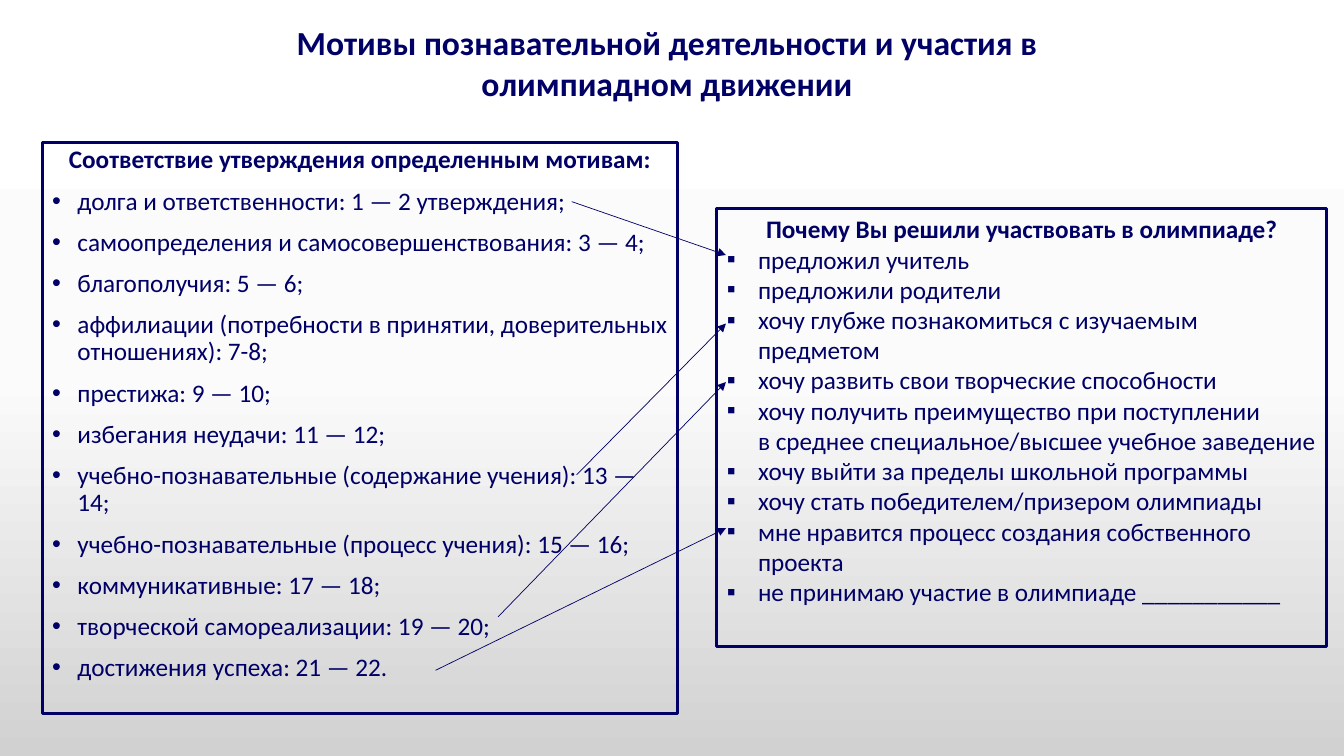
from dataclasses import dataclass
from typing import Any

from lxml.etree import SubElement
from pptx import Presentation
from pptx.dml.color import RGBColor
from pptx.enum.shapes import MSO_CONNECTOR, MSO_SHAPE
from pptx.enum.text import MSO_ANCHOR, PP_ALIGN
from pptx.oxml.ns import qn
from pptx.util import Inches, Pt

COLORS = {"navy": "000066", "top": "FFFFFF", "middle": "FBFBFB", "bottom": "D1D1D1"}
NAVY = RGBColor.from_string(COLORS["navy"])
GRADIENT = {0: "top", 50: "middle", 100: "bottom"}


@dataclass
class ListBox:
    at: tuple[float, float, float, float]
    heading: str
    items: list[str]
    bullet: str
    indent: float
    spacing: dict[str, Any]


@dataclass
class Arrow:
    start: tuple[float, float]
    end: tuple[float, float]


TITLE = "Мотивы познавательной деятельности и участия в олимпиадном движении"

BOXES = [
    ListBox(
        (0.42, 1.41, 6.3, 5.67),
        "Соответствие утверждения определенным мотивам:",
        [
            "долга и ответственности: 1 — 2 утверждения;",
            "самоопределения и самосовершенствования: 3 — 4;",
            "благополучия: 5 — 6;",
            "аффилиации (потребности в принятии, доверительных отношениях): 7-8;",
            "престижа: 9 — 10;",
            "избегания неудачи: 11 — 12;",
            "учебно-познавательные (содержание учения): 13 — 14;",
            "учебно-познавательные (процесс учения): 15 — 16;",
            "коммуникативные: 17 — 18;",
            "творческой самореализации: 19 — 20;",
            "достижения успеха: 21 — 22.",
        ],
        "•", 0.25, {"line_spacing": 0.9, "space_before": Pt(10)},
    ),
    ListBox(
        (7.11, 2.07, 6.05, 4.34),
        "Почему Вы решили участвовать в олимпиаде?",
        [
            "предложил учитель",
            "предложили родители",
            "хочу глубже познакомиться с изучаемым предметом",
            "хочу развить свои творческие способности",
            "хочу получить преимущество при поступлении\n"
            "в среднее специальное/высшее учебное заведение",
            "хочу выйти за пределы школьной программы",
            "хочу стать победителем/призером олимпиады",
            "мне нравится процесс создания собственного проекта",
            "не принимаю участие в олимпиаде ___________",
        ],
        "▪", 0.31, {},
    ),
]

ARROWS = [
    Arrow((5.67, 2), (7.2, 2.53)),
    Arrow((4.32, 6.65), (7.2, 5.24)),
    Arrow((4.94, 6.12), (7.2, 3.79)),
    Arrow((5.72, 4.71), (7.2, 3.21)),
]


def set_format(target: Any, values: dict[str, Any]) -> None:
    for name, value in values.items():
        setattr(target, name, value)


def write(p: Any, text: str, size: int, bold: bool, align: PP_ALIGN) -> None:
    p.text = text
    p.alignment = align
    for r in p.runs:
        set_format(r.font, {"name": "Calibri", "size": Pt(size), "bold": bold})
        r.font.color.rgb = NAVY


def add_bullet(p: Any, char: str, indent: float) -> None:
    pPr = p._p.get_or_add_pPr()
    pPr.set("marL", str(Inches(indent)))
    pPr.set("indent", str(-Inches(indent)))
    SubElement(pPr, qn("a:buFont")).set("typeface", "Arial")
    SubElement(pPr, qn("a:buChar")).set("char", char)


def paint_background(s: Any) -> None:
    fill = s.background.fill
    fill.gradient()
    fill.gradient_angle = 270
    stops = s.background._cSld.find(".//" + qn("a:gsLst"))
    for stop in list(stops):
        stops.remove(stop)
    for percent, color in GRADIENT.items():
        stop = SubElement(stops, qn("a:gs"), pos=str(percent * 1000))
        SubElement(stop, qn("a:srgbClr"), val=COLORS[color])


def add_title(s: Any) -> None:
    tf = s.shapes.add_textbox(*map(Inches, (2.11, 0.17, 9.01, 0.91))).text_frame
    tf.word_wrap = True
    write(tf.paragraphs[0], TITLE, 24, True, PP_ALIGN.CENTER)


def add_list_box(s: Any, box: ListBox) -> None:
    sp = s.shapes.add_shape(MSO_SHAPE.RECTANGLE, *map(Inches, box.at))
    sp.shadow.inherit = False
    sp.fill.background()
    sp.line.color.rgb = NAVY
    sp.line.width = Pt(2.25)
    tf = sp.text_frame
    set_format(tf, {"word_wrap": True, "vertical_anchor": MSO_ANCHOR.TOP})
    heading = tf.paragraphs[0]
    write(heading, box.heading, 18, True, PP_ALIGN.CENTER)
    set_format(heading, box.spacing)
    for item in box.items:
        p = tf.add_paragraph()
        write(p, item, 18, False, PP_ALIGN.LEFT)
        set_format(p, box.spacing)
        add_bullet(p, box.bullet, box.indent)


def add_arrow(s: Any, arrow: Arrow) -> None:
    sp = s.shapes.add_connector(
        MSO_CONNECTOR.STRAIGHT, *map(Inches, arrow.start + arrow.end)
    )
    sp.line.color.rgb = NAVY
    sp.line.width = Pt(0.5)
    SubElement(sp.line._get_or_add_ln(), qn("a:tailEnd"), type="triangle")
    SubElement(sp._element.spPr, qn("a:effectLst"))


def main() -> None:
    prs = Presentation()
    set_format(prs, {"slide_width": Inches(13.33), "slide_height": Inches(7.5)})
    s = prs.slides.add_slide(prs.slide_layouts[6])
    paint_background(s)
    for box in BOXES:
        add_list_box(s, box)
    add_title(s)
    for arrow in ARROWS:
        add_arrow(s, arrow)
    prs.save("out.pptx")


if __name__ == "__main__":
    main()
